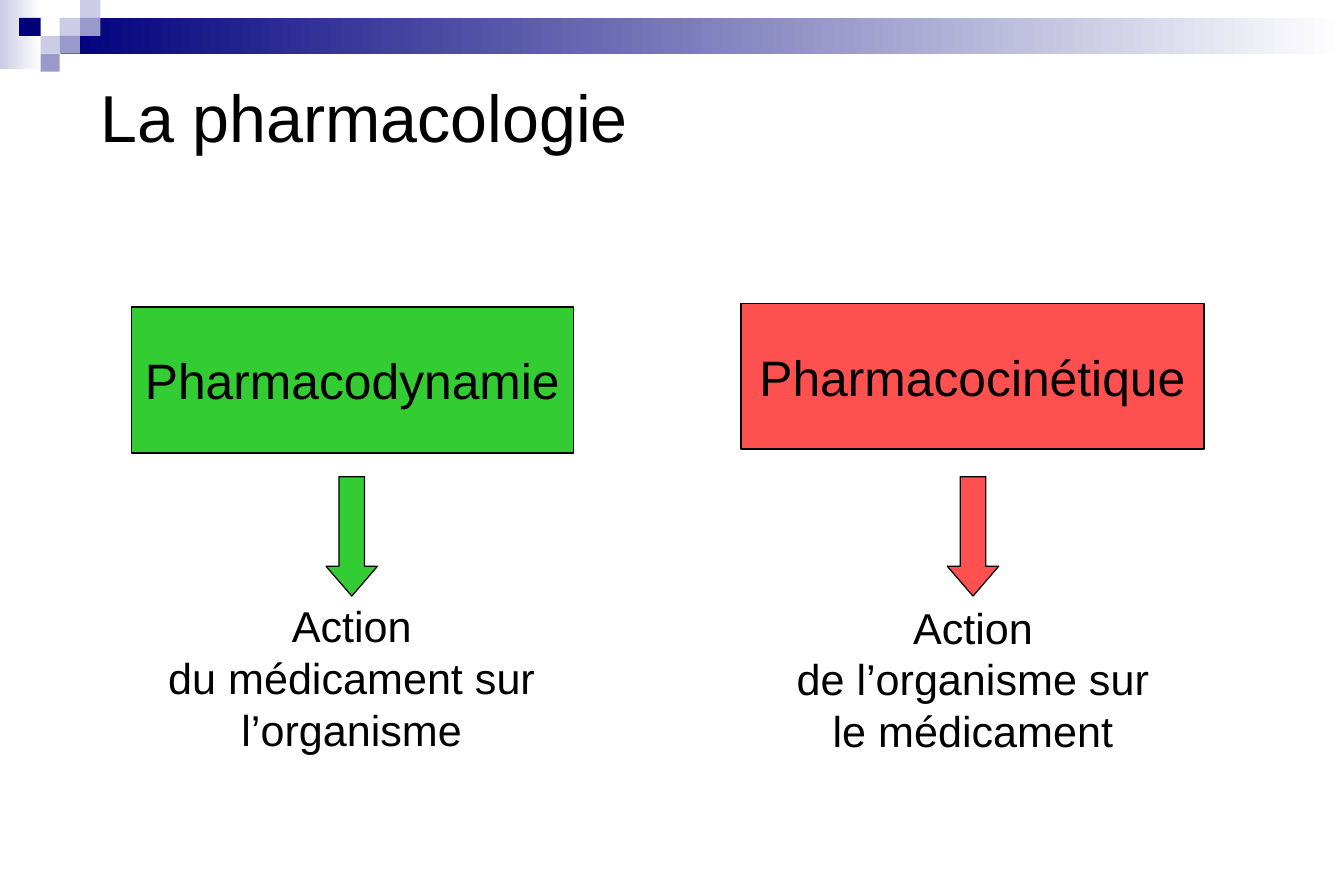
import pptx
import pptx.dml.color
import pptx.enum.shapes
import pptx.enum.text
import pptx.util

SHAPES = pptx.enum.shapes.MSO_SHAPE
ALIGN = pptx.enum.text.PP_ALIGN
EMU_PER_PX = 9144  # 100 px to the inch

NAVY, LAVENDER, PERIWINKLE = "00007D", "CCCCE6", "9999CC"
GREEN, RED, BLACK, WHITE = "33CC33", "FF5050", "000000", "FFFFFF"


def color(hex_string):
    return pptx.dml.color.RGBColor.from_string(hex_string)


def px(*lengths):
    return [pptx.util.Emu(length * EMU_PER_PX) for length in lengths]


class SlideBuilder:
    """Holds the slide and its text style."""

    def __init__(self, slide, font="Arial", text_color=BLACK):
        self.slide = slide
        self.font = font
        self.text_color = text_color

    def set_text(self, shape, text, size, alignment):
        frame = shape.text_frame
        frame.word_wrap = True
        frame.auto_size = pptx.enum.text.MSO_AUTO_SIZE.NONE
        frame.vertical_anchor = pptx.enum.text.MSO_ANCHOR.MIDDLE
        frame.text = text
        for paragraph in frame.paragraphs:
            paragraph.alignment = alignment
            for run in paragraph.runs:
                run.font.name = self.font
                run.font.size = pptx.util.Pt(size)
                run.font.color.rgb = color(self.text_color)

    def title(self, box, text, size):
        shape = self.slide.shapes.title
        shape.left, shape.top, shape.width, shape.height = px(*box)
        self.set_text(shape, text, size, ALIGN.LEFT)

    def text(self, box, text, size):
        shape = self.slide.shapes.add_textbox(*px(*box))
        self.set_text(shape, text, size, ALIGN.CENTER)

    def shape(self, box, fill, kind=SHAPES.RECTANGLE, line_width=None):
        shape = self.slide.shapes.add_shape(kind, *px(*box))
        shape.shadow.inherit = False
        shape.fill.solid()
        shape.fill.fore_color.rgb = color(fill)
        if line_width:
            shape.line.color.rgb = color(BLACK)
            shape.line.width = pptx.util.Pt(line_width)
        else:
            shape.line.fill.background()
        return shape

    def gradient(self, box, start, end):
        """Add a rectangle that fades from left to right."""
        fill = self.shape(box, start).fill
        fill.gradient()
        fill.gradient_angle = 0
        for stop, hex_string in zip(fill.gradient_stops, (start, end)):
            stop.color.rgb = color(hex_string)

    def labelled_box(self, box, fill, text, size):
        shape = self.shape(box, fill, line_width=1)
        self.set_text(shape, text, size, ALIGN.CENTER)

    def down_arrow(self, box, fill):
        arrow = self.shape(box, fill, SHAPES.DOWN_ARROW, line_width=0.75)
        arrow.adjustments[0] = 0.5
        arrow.adjustments[1] = 0.58


def add_banner(builder):
    builder.gradient((0, 0, 35, 58), LAVENDER, WHITE)
    builder.gradient((51, 15, 1074, 30), NAVY, WHITE)
    column_edges = (16, 34, 50, 67, 84)
    row_height = 15
    mosaic = [
        (2, 1, LAVENDER), (3, 0, LAVENDER), (3, 1, PERIWINKLE),
        (1, 2, LAVENDER), (0, 1, NAVY), (2, 2, PERIWINKLE),
        (1, 3, PERIWINKLE),
    ]
    for column, row, fill in mosaic:
        left, right = column_edges[column:column + 2]
        builder.shape((left, row * row_height, right - left, row_height), fill)


def main():
    presentation = pptx.Presentation()
    presentation.slide_width, presentation.slide_height = px(1125, 750)
    slide = presentation.slides.add_slide(presentation.slide_layouts[5])
    builder = SlideBuilder(slide)

    add_banner(builder)
    builder.title((74, 36, 636, 122), "La pharmacologie", 40)

    branches = [
        ("Pharmacodynamie", (110, 257, 370, 122), GREEN, 273,
         "Action\vdu médicament sur l’organisme", (74, 492, 441, 150)),
        ("Pharmacocinétique", (620, 254, 388, 122), RED, 793,
         "Action\vde l’organisme sur\vle médicament", (594, 493, 441, 150)),
    ]
    for name, name_box, fill, arrow_left, action, action_box in branches:
        builder.labelled_box(name_box, fill, name, 30)
        builder.down_arrow((arrow_left, 399, 43, 100), fill)
        builder.text(action_box, action, 26)

    presentation.save("out.pptx")


if __name__ == "__main__":
    main()
